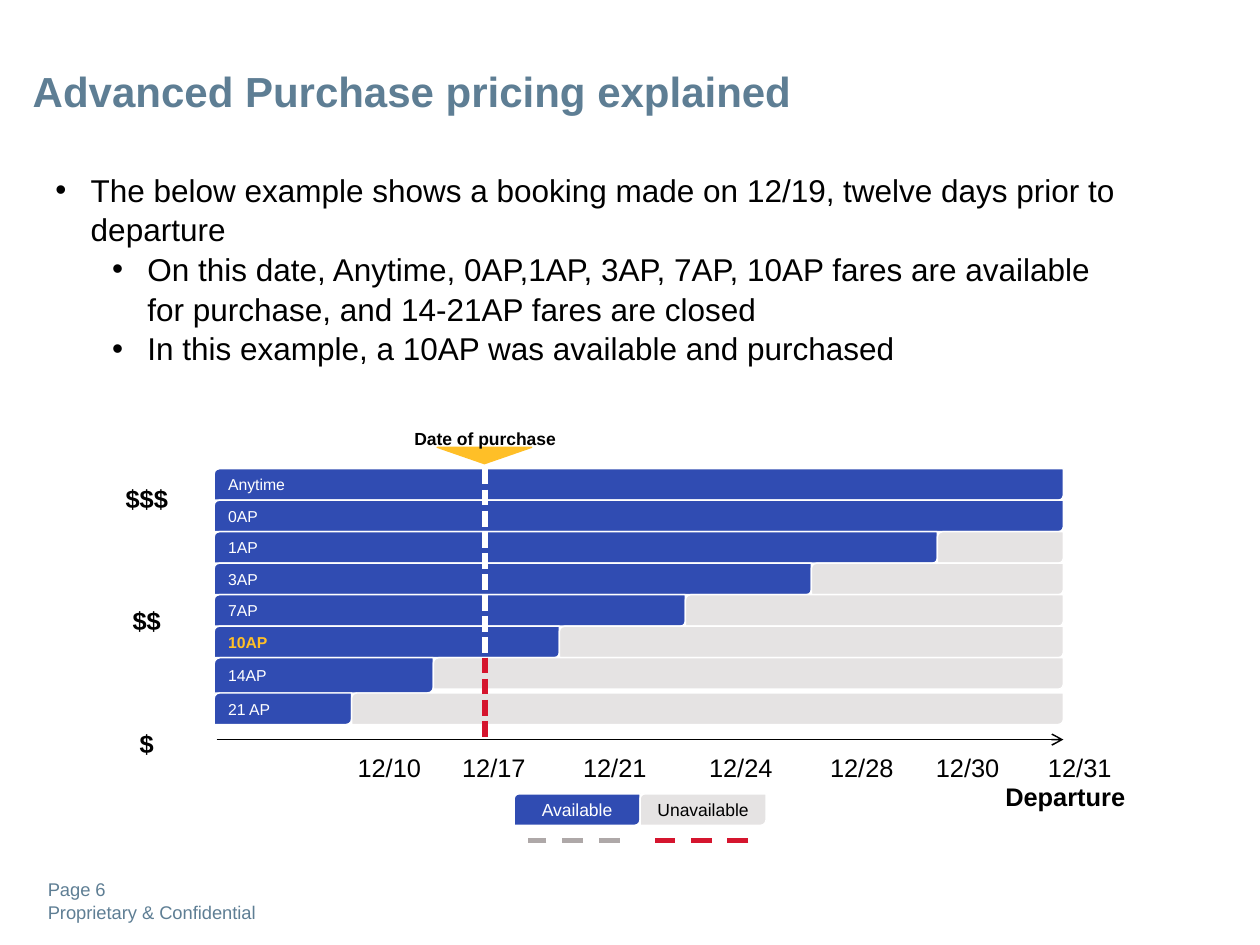
import pptx
import pptx.util
import pptx.dml.color
import pptx.enum.dml
import pptx.enum.shapes
import pptx.enum.text
import pptx.oxml.ns
import lxml.etree

Inches = pptx.util.Inches
Pt = pptx.util.Pt
RGBColor = pptx.dml.color.RGBColor
Align = pptx.enum.text.PP_ALIGN
Anchor = pptx.enum.text.MSO_ANCHOR
Dash = pptx.enum.dml.MSO_LINE
Shape = pptx.enum.shapes.MSO_SHAPE

BLACK = RGBColor(0x00, 0x00, 0x00)
WHITE = RGBColor(0xFF, 0xFF, 0xFF)
SLATE = RGBColor(0x5E, 0x7E, 0x94)
BLUE = RGBColor(0x30, 0x4C, 0xB2)
GRAY = RGBColor(0xE5, 0xE3, 0xE3)
DARK_GRAY = RGBColor(0xAE, 0xA8, 0xA8)
YELLOW = RGBColor(0xFF, 0xBF, 0x27)
RED = RGBColor(0xD5, 0x15, 0x2E)

BAR_LEFT = 1.7
BAR_RIGHT = 8.44
BAR_HEIGHT = 0.25
PURCHASE_X = 3.85
AXIS_Y = 5.87

FARES = [
    ("Anytime", 3.72, 8.44),
    ("0AP", 3.97, 8.44),
    ("1AP", 4.22, 7.44),
    ("3AP", 4.47, 6.44),
    ("7AP", 4.72, 5.44),
    ("10AP", 4.97, 4.44),
    ("14AP", 5.22, 3.44),
    ("21 AP", 5.5, 2.79),
]
DATES = [
    ("12/10", 3.09),
    ("12/17", 3.92),
    ("12/21", 4.88),
    ("12/24", 5.88),
    ("12/28", 6.84),
    ("12/30", 7.68),
    ("12/31", 8.57),
]
BULLETS = [
    (0, "The below example shows a booking made on 12/19, twelve days prior to departure"),
    (1, "On this date, Anytime, 0AP,1AP, 3AP, 7AP, 10AP fares are available "
        "for purchase, and 14-21AP fares are closed"),
    (1, "In this example, a 10AP was available and purchased"),
]


def add_run(paragraph, text, size, color, bold=False):
    run = paragraph.add_run()
    run.text = text
    run.font.name = "Arial"
    run.font.size = Pt(size)
    run.font.bold = bold
    run.font.color.rgb = color


def add_text(slide, left, top, width, height, lines, size, color=BLACK, bold=False,
             align=Align.LEFT, inset=(0.1, 0.05), anchor=Anchor.TOP, gap=0):
    box = slide.shapes.add_textbox(Inches(left), Inches(top), Inches(width), Inches(height))
    frame = box.text_frame
    frame.word_wrap = True
    frame.vertical_anchor = anchor
    frame.margin_left = frame.margin_right = Inches(inset[0])
    frame.margin_top = frame.margin_bottom = Inches(inset[1])
    for index, line in enumerate(lines):
        paragraph = frame.add_paragraph() if index else frame.paragraphs[0]
        paragraph.alignment = align
        paragraph.line_spacing = 1.05
        if index and gap:
            paragraph.space_before = Pt(gap)
        add_run(paragraph, line, size, color, bold)
    return box


def add_bullet(paragraph, level):
    paragraph.level = level
    properties = paragraph._p.get_or_add_pPr()
    properties.set("marL", str(Inches(0.73 if level else 0.28)))
    properties.set("indent", str(Inches(-0.28)))
    tag = pptx.oxml.ns.qn
    lxml.etree.SubElement(properties, tag("a:buFont"), typeface="Arial")
    lxml.etree.SubElement(properties, tag("a:buChar"), char="•")


def add_shape(slide, kind, left, top, width, height, fill, outline):
    shape = slide.shapes.add_shape(
        kind, Inches(left), Inches(top), Inches(width), Inches(height))
    shape.shadow.inherit = False
    shape.fill.solid()
    shape.fill.fore_color.rgb = fill
    shape.line.color.rgb = outline
    shape.line.width = Pt(0.85)
    return shape


def add_bar(slide, left, top, width, fill, text="", size=9, color=WHITE,
            bold=False, align=Align.LEFT, height=BAR_HEIGHT):
    bar = add_shape(slide, Shape.ROUND_2_DIAG_RECTANGLE, left, top, width, height, fill, WHITE)
    if text:
        bar.text_frame.vertical_anchor = Anchor.MIDDLE
        paragraph = bar.text_frame.paragraphs[0]
        paragraph.alignment = align
        add_run(paragraph, text, size, color, bold)


def add_line(slide, start, end, color, width, dash=None, arrow=False):
    line = slide.shapes.add_connector(
        pptx.enum.shapes.MSO_CONNECTOR.STRAIGHT,
        Inches(start[0]), Inches(start[1]), Inches(end[0]), Inches(end[1]))
    line.line.color.rgb = color
    line.line.width = Pt(width)
    if dash:
        line.line.dash_style = dash
    tag = pptx.oxml.ns.qn
    if arrow:
        lxml.etree.SubElement(line.line._get_or_add_ln(), tag("a:tailEnd"), type="arrow")
    lxml.etree.SubElement(line._element.spPr, tag("a:effectLst"))


def add_fare_chart(slide):
    for name, top, end in FARES:
        purchased = name == "10AP"
        add_bar(slide, BAR_LEFT, top, end - BAR_LEFT, BLUE, name,
                color=YELLOW if purchased else WHITE, bold=purchased,
                height=0.28 if name == "14AP" else BAR_HEIGHT)
        if end < BAR_RIGHT:
            add_bar(slide, end, top, BAR_RIGHT - end, GRAY)
    add_line(slide, (1.72, AXIS_Y), (BAR_RIGHT, AXIS_Y), BLACK, 0.85, arrow=True)
    add_line(slide, (PURCHASE_X, 3.72), (PURCHASE_X, 5.22), WHITE, 3, Dash.SQUARE_DOT)
    add_line(slide, (PURCHASE_X, 5.22), (PURCHASE_X, AXIS_Y), RED, 3, Dash.SQUARE_DOT)
    add_shape(slide, Shape.FLOWCHART_MERGE, 3.47, 3.55, 0.75, 0.13, YELLOW, YELLOW)
    add_text(slide, 3.1, 3.34, 1.5, 0.27, ["Date of purchase"], 10,
             bold=True, align=Align.CENTER)
    add_text(slide, 0.83, 3.77, 0.67, 2.3, ["$$$", "$$", "$"], 14.5,
             bold=True, align=Align.CENTER, gap=52)
    for date, center in DATES:
        add_text(slide, center - 0.4, 5.92, 0.8, 0.33, [date], 14.5,
                 align=Align.CENTER, inset=(0.09, 0.04))
    add_text(slide, 7.84, 6.14, 1.23, 0.35, ["Departure"], 14.5,
             bold=True, align=Align.CENTER)


def add_legend(slide):
    add_bar(slide, 4.08, 6.3, 1, BLUE, "Available", 10, align=Align.CENTER)
    add_bar(slide, 5.08, 6.3, 1, GRAY, "Unavailable", 10, BLACK, align=Align.CENTER)
    add_line(slide, (4.92, 6.67), (4.19, 6.67), DARK_GRAY, 3, Dash.DASH)
    add_line(slide, (5.94, 6.67), (5.2, 6.67), RED, 3, Dash.DASH)


def main():
    presentation = pptx.Presentation()
    presentation.slide_width = Inches(10)
    presentation.slide_height = Inches(7.5)
    slide = presentation.slides.add_slide(presentation.slide_layouts[6])
    add_text(slide, 0.17, 0.46, 9.33, 0.51, ["Advanced Purchase pricing explained"],
             24, SLATE, bold=True, inset=(0.09, 0.04))
    body = add_text(slide, 0.35, 1.3, 8.71, 1.6, [text for _, text in BULLETS],
                    18, inset=(0.09, 0.04))
    for paragraph, (level, _) in zip(body.text_frame.paragraphs, BULLETS):
        add_bullet(paragraph, level)
    add_fare_chart(slide)
    add_legend(slide)
    add_text(slide, 0.38, 6.97, 1.73, 0.35, ["Page 6", "Proprietary & Confidential"],
             10.5, SLATE, inset=(0, 0), anchor=Anchor.MIDDLE)
    presentation.save("out.pptx")


if __name__ == "__main__":
    main()
